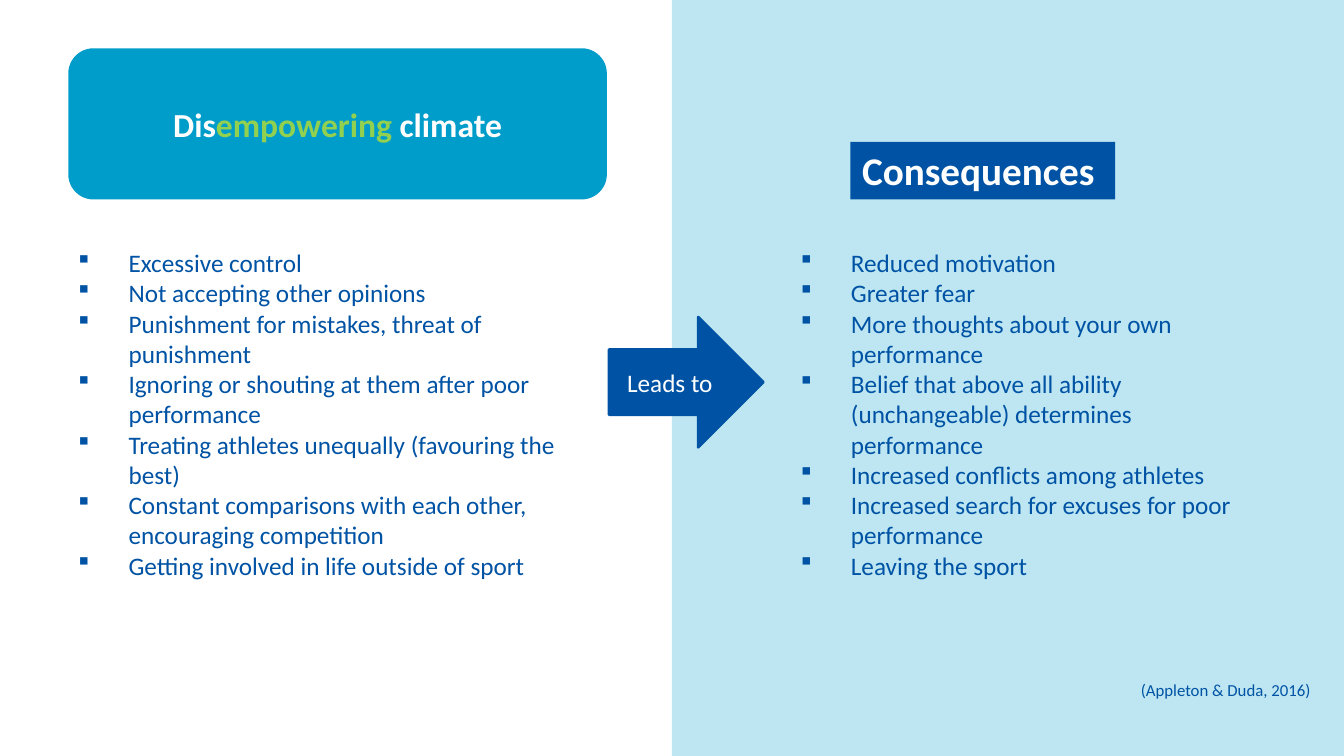
from lxml.etree import SubElement
from pptx import Presentation
from pptx.dml.color import RGBColor
from pptx.enum.shapes import MSO_SHAPE
from pptx.enum.text import MSO_ANCHOR, PP_ALIGN
from pptx.oxml.ns import qn
from pptx.util import Pt

EMU_PER_PX = 9525
WIDTH, HEIGHT = 1280, 720
COLUMN_TOP, COLUMN_HEIGHT = 231, 447
NAVY, TEAL, PALE, GREEN, WHITE = "0053A4", "009DCA", "BDE6F2", "92D050", "FFFFFF"

CLIMATE = [
    "Excessive control",
    "Not accepting other opinions",
    "Punishment for mistakes, threat of punishment",
    "Ignoring or shouting at them after poor performance",
    "Treating athletes unequally (favouring the best)",
    "Constant comparisons with each other, encouraging competition",
    "Getting involved in life outside of sport",
]
CONSEQUENCES = [
    "Reduced motivation",
    "Greater fear",
    "More thoughts about your own performance",
    "Belief that above all ability (unchangeable) determines performance",
    "Increased conflicts among athletes",
    "Increased search for excuses for poor performance",
    "Leaving the sport",
]


def px(length):
    """Turn pixels into EMU."""
    return length * EMU_PER_PX


def color(value):
    """Turn a hex string into a colour."""
    return RGBColor.from_string(value)


def style(span, size, ink, bold=False):
    """Format one run."""
    span.font.name = "Calibri"
    span.font.size = Pt(size)
    span.font.bold = bold
    span.font.color.rgb = color(ink)


def add_panel(page, kind, box, fill):
    """Add a filled shape without outline or shadow."""
    panel = page.shapes.add_shape(kind, *map(px, box))
    panel.shadow.inherit = False
    panel.fill.solid()
    panel.fill.fore_color.rgb = color(fill)
    panel.line.fill.background()
    return panel


def write_label(panel, spans, size, bold=False, anchor=MSO_ANCHOR.MIDDLE):
    """Write one centred line made of text and colour pairs."""
    panel.text_frame.vertical_anchor = anchor
    para = panel.text_frame.paragraphs[0]
    para.alignment = PP_ALIGN.CENTER
    for text, ink in spans:
        span = para.add_run()
        span.text = text
        style(span, size, ink, bold)


def add_text(page, box, text, size):
    """Add a wrapping text box with one paragraph per line of text."""
    frame = page.shapes.add_textbox(*map(px, box)).text_frame
    frame.word_wrap = True
    frame.text = text
    for para in frame.paragraphs:
        style(para.runs[0], size, NAVY)
    return frame


def add_bullets(page, box, items):
    """Add a list with square bullets and a hanging indent."""
    for para in add_text(page, box, "\n".join(items), 18).paragraphs:
        properties = para._p.get_or_add_pPr()
        properties.set("marL", str(px(48)))
        properties.set("indent", str(px(-48)))
        SubElement(properties, qn("a:buFont"), typeface="Wingdings")
        SubElement(properties, qn("a:buChar"), char="§")


def add_climate(page, left, width):
    """Place the climate heading above its list."""
    heading = add_panel(page, MSO_SHAPE.ROUNDED_RECTANGLE, (left, 46, width, 144), TEAL)
    spans = [("Dis", WHITE), ("empowering", GREEN), (" climate", WHITE)]
    write_label(heading, spans, 24, bold=True)
    add_bullets(page, (left, COLUMN_TOP, width, COLUMN_HEIGHT), CLIMATE)


def add_consequences(page, left, width):
    """Place the consequences heading above its list."""
    heading = add_panel(page, MSO_SHAPE.RECTANGLE, (left + 57, 135, 252, 55), NAVY)
    heading.text_frame.word_wrap = False
    write_label(heading, [("Consequences ", WHITE)], 28, bold=True, anchor=MSO_ANCHOR.TOP)
    add_bullets(page, (left, COLUMN_TOP, width, COLUMN_HEIGHT), CONSEQUENCES)


def add_arrow(page, box):
    """Place the arrow that links the two columns."""
    arrow = add_panel(page, MSO_SHAPE.RIGHT_ARROW, box, NAVY)
    arrow.line.color.rgb = color(NAVY)
    arrow.line.width = Pt(2)
    write_label(arrow, [("Leads to", WHITE)], 18)


def main():
    """Build and save the slide."""
    deck = Presentation()
    deck.slide_width, deck.slide_height = px(WIDTH), px(HEIGHT)
    page = deck.slides.add_slide(deck.slide_layouts[6])
    half = WIDTH // 2
    add_panel(page, MSO_SHAPE.RECTANGLE, (half, 0, half, HEIGHT), PALE)
    add_climate(page, 65, 513)
    add_arrow(page, (580, 302, 147, 124))
    add_consequences(page, 753, 453)
    add_text(page, (1077, 643, 203, 29), "(Appleton & Duda, 2016)", 12)
    deck.save("out.pptx")


if __name__ == "__main__":
    main()
